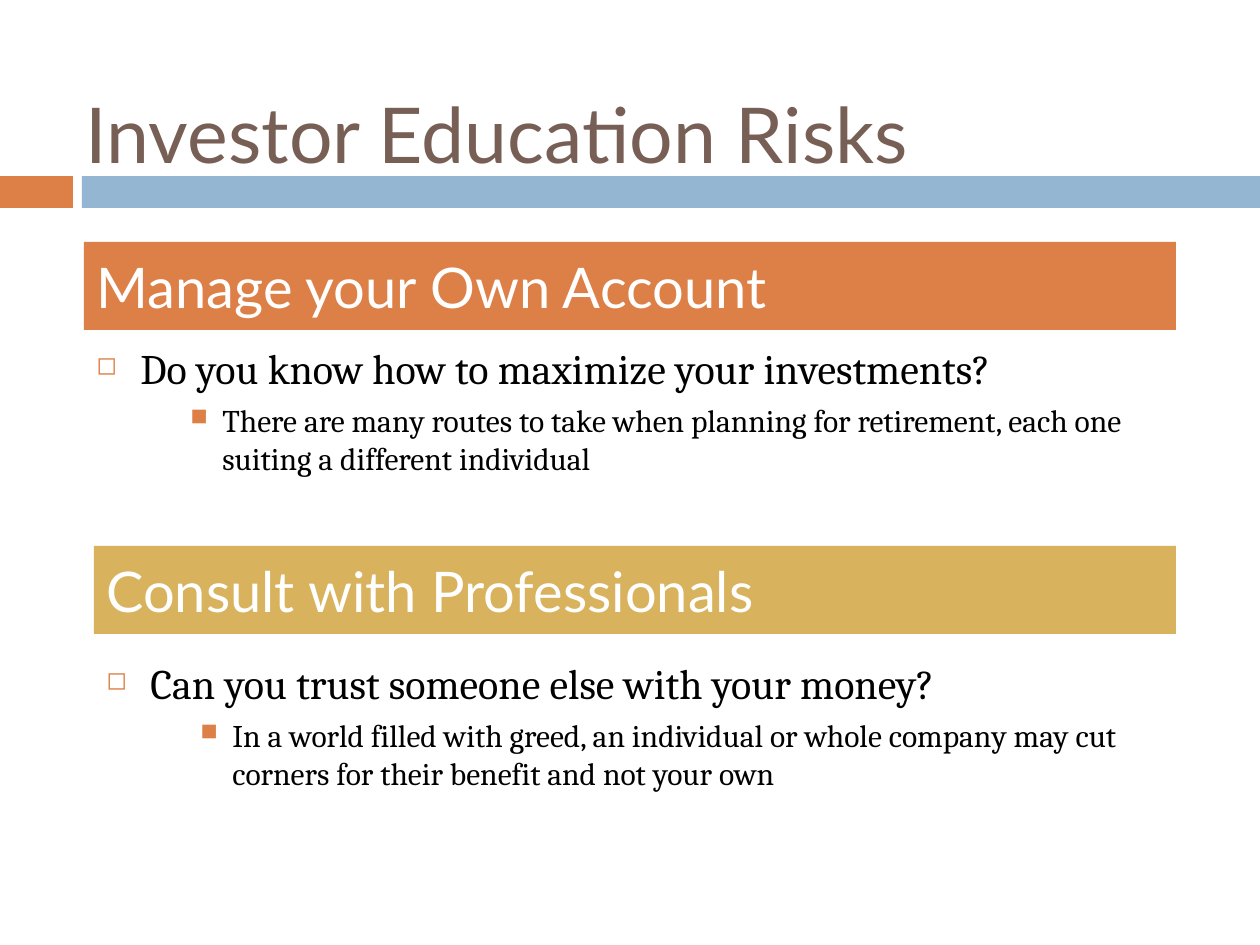
import pptx
import pptx.dml.color
import pptx.enum.shapes
import pptx.enum.text
import pptx.oxml.ns
import pptx.util
from lxml import etree

PIXEL = 914400 / 126
COLORS = {
    "orange": "DD8047",
    "blue": "94B6D2",
    "gold": "D8B25C",
    "brown": "775F55",
    "black": "000000",
    "white": "FFFFFF",
}
TITLE_FONT = {"name": "Lato", "size": pptx.util.Pt(44)}
HEADING_FONT = {"name": "Lato", "size": pptx.util.Pt(32)}
QUESTION = {"size": 24, "level": 0, "before": 7, "margin": 44, "hanging": 44,
            "bullet": "◻", "percent": 60}
DETAIL = {"size": 18, "level": 2, "before": 5, "margin": 126, "hanging": 32,
          "bullet": "■", "percent": 75}
SECTIONS = [
    {
        "box": (84, 242, 1092, 293),
        "body_top": 94,
        "color": "orange",
        "heading": "Manage your Own Account",
        "question": "Do you know how to maximize your investments?",
        "detail": "There are many routes to take when planning for retirement, "
                  "each one suiting a different individual",
    },
    {
        "box": (94, 546, 1082, 326),
        "body_top": 105,
        "color": "gold",
        "heading": "Consult with Professionals",
        "question": "Can you trust someone else with your money?",
        "detail": "In a world filled with greed, an individual or whole company "
                  "may cut corners for their benefit and not your own",
    },
]


def emu(pixels):
    """Turn px into EMU."""
    return pptx.util.Emu(round(pixels * PIXEL))


def apply_format(target, values):
    """Set every attribute in a dict of format values."""
    for name, value in values.items():
        setattr(target, name, value)


def write_text(paragraph, text, font, color):
    """Write one formatted run into a paragraph."""
    run = paragraph.add_run()
    run.text = text
    apply_format(run.font, font)
    run.font.color.rgb = pptx.dml.color.RGBColor.from_string(COLORS[color])


def add_bar(slide, box, color):
    """Add a plain filled rectangle."""
    shape = slide.shapes.add_shape(
        pptx.enum.shapes.MSO_SHAPE.RECTANGLE, *map(emu, box))
    shape.shadow.inherit = False
    shape.fill.solid()
    shape.fill.fore_color.rgb = pptx.dml.color.RGBColor.from_string(COLORS[color])
    shape.line.fill.background()
    return shape


def add_bullet(paragraph, style):
    """Give a paragraph its hanging indent and coloured bullet."""
    properties = paragraph._p.get_or_add_pPr()
    properties.set("marL", str(emu(style["margin"])))
    properties.set("indent", str(-emu(style["hanging"])))
    qualify = pptx.oxml.ns.qn
    color = etree.SubElement(properties, qualify("a:buClr"))
    etree.SubElement(color, qualify("a:srgbClr"), val=COLORS["orange"])
    etree.SubElement(properties, qualify("a:buSzPct"), val=str(style["percent"] * 1000))
    etree.SubElement(properties, qualify("a:buChar"), char=style["bullet"])


def add_header(slide, box):
    """Place the title above its two-colour rule."""
    left, top, width, height = box
    title = slide.shapes.title
    apply_format(title, {"left": emu(left + 73), "top": emu(top),
                         "width": emu(1124), "height": emu(120)})
    apply_format(title.text_frame, {
        "word_wrap": True,
        "vertical_anchor": pptx.enum.text.MSO_ANCHOR.MIDDLE,
    })
    paragraph = title.text_frame.paragraphs[0]
    paragraph.alignment = pptx.enum.text.PP_ALIGN.LEFT
    write_text(paragraph, "Investor Education Risks", TITLE_FONT, "brown")
    rule_height = 32
    rule_top = top + height - rule_height
    add_bar(slide, (left, rule_top, 73, rule_height), "orange")
    add_bar(slide, (left + 82, rule_top, width - 82, rule_height), "blue")


def add_section(slide, box, section):
    """Place a heading band with its question and detail below."""
    left, top, width, height = box
    band = add_bar(slide, (left, top, width, 88), section["color"])
    apply_format(band.text_frame, {
        "word_wrap": True,
        "vertical_anchor": pptx.enum.text.MSO_ANCHOR.MIDDLE,
    })
    paragraph = band.text_frame.paragraphs[0]
    apply_format(paragraph, {
        "alignment": pptx.enum.text.PP_ALIGN.LEFT,
        "space_before": pptx.util.Pt(7),
    })
    write_text(paragraph, section["heading"], HEADING_FONT, "white")

    body_top = section["body_top"]
    body = slide.shapes.add_textbox(
        *map(emu, (left, top + body_top, width - 11, height - body_top)))
    frame = body.text_frame
    frame.word_wrap = True
    paragraphs = [frame.paragraphs[0], frame.add_paragraph()]
    for paragraph, part, style in zip(
            paragraphs, ("question", "detail"), (QUESTION, DETAIL)):
        apply_format(paragraph, {
            "level": style["level"],
            "space_before": pptx.util.Pt(style["before"]),
        })
        add_bullet(paragraph, style)
        font = {"name": "Cambria", "size": pptx.util.Pt(style["size"])}
        write_text(paragraph, section[part], font, "black")


def main():
    """Build and save the slide."""
    presentation = pptx.Presentation()
    apply_format(presentation, {"slide_width": emu(1260), "slide_height": emu(945)})
    slide = presentation.slides.add_slide(presentation.slide_layouts[5])
    add_header(slide, (0, 73, 1260, 135))
    for section in SECTIONS:
        add_section(slide, section["box"], section)
    presentation.save("out.pptx")


if __name__ == "__main__":
    main()
